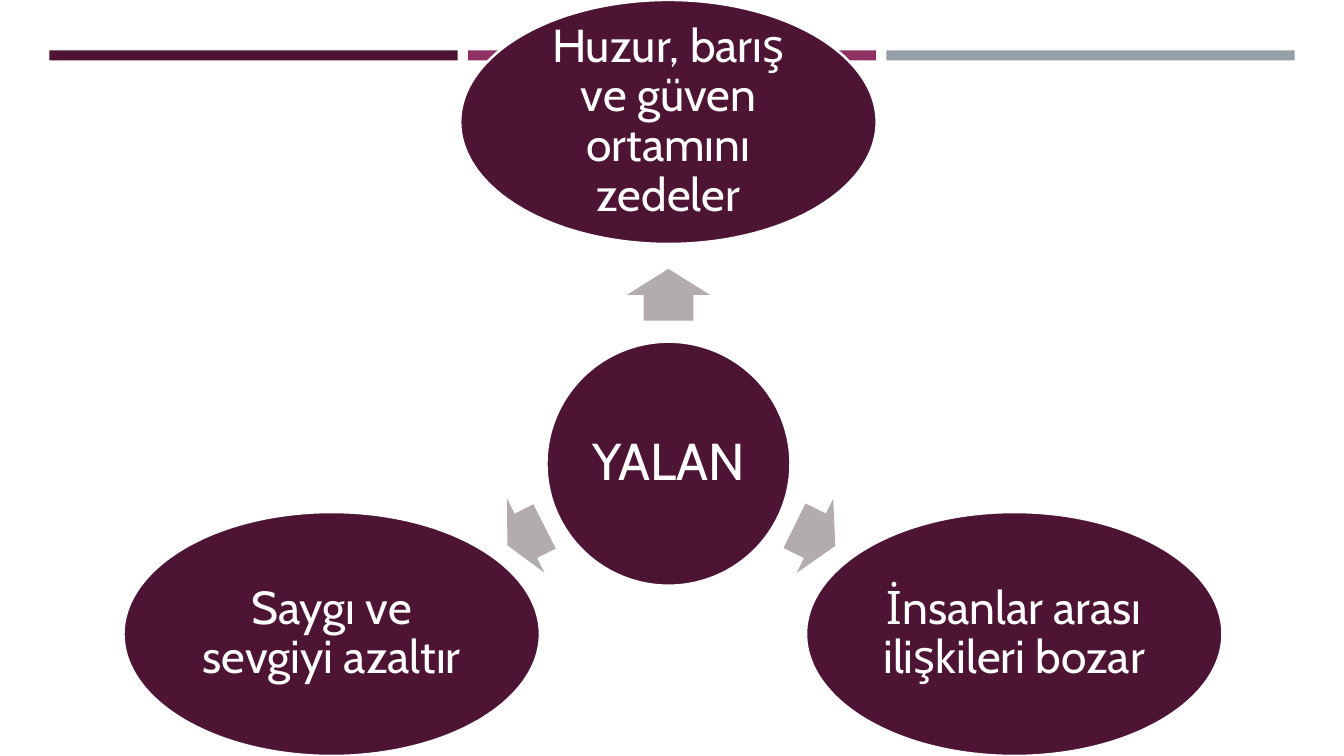
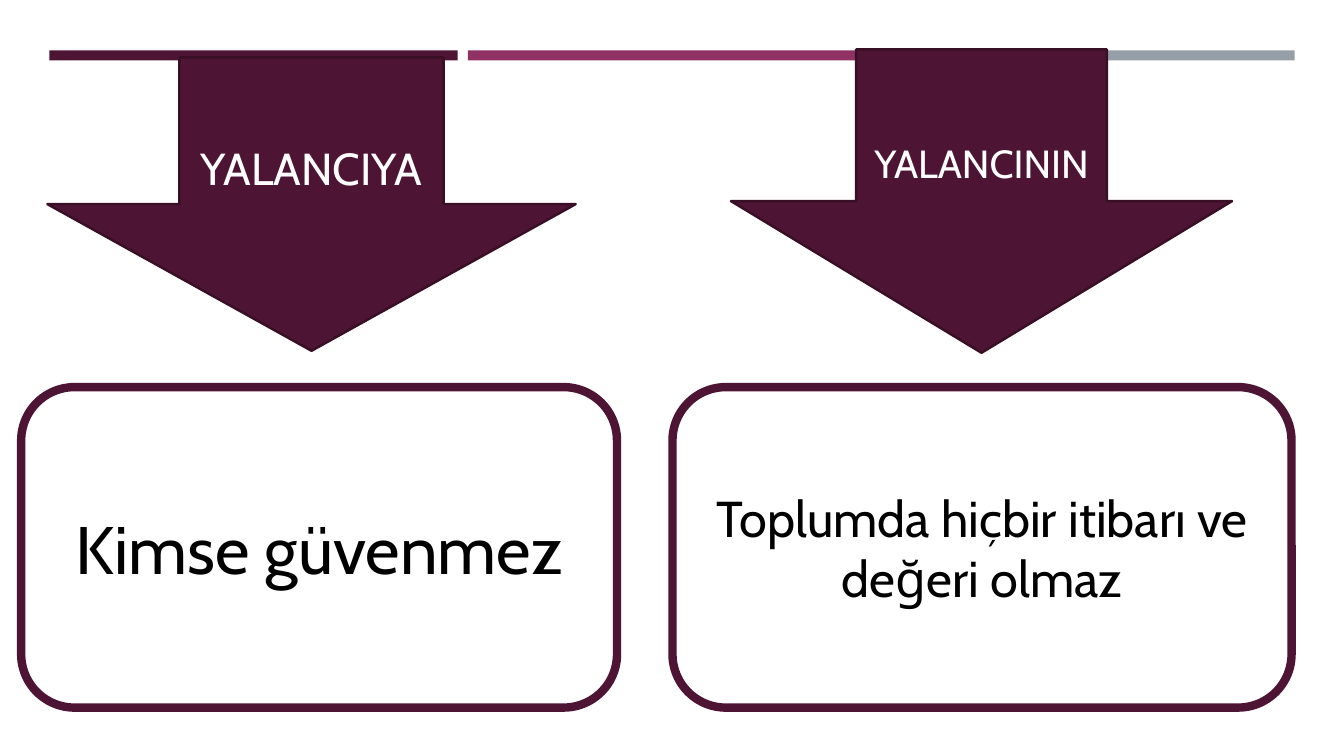
"""Build two slides on the consequences of lying."""
import math

import pptx
import pptx.dml.color
import pptx.enum.shapes
import pptx.enum.text
import pptx.util

SHAPE = pptx.enum.shapes.MSO_SHAPE
FONT = "Cabin"
COLORS = {
    "plum": "4D1434",
    "magenta": "903163",
    "slate": "969FA7",
    "edge": "390F26",
    "arrow": "B2ACAE",
    "white": "FFFFFF",
    "black": "000000",
}

WIDTH, HEIGHT = 13.33, 7.5
BANDS = ["plum", "magenta", "slate"]
BAND_LEFT, BAND_TOP, BAND_WIDTH, BAND_HEIGHT, BAND_GAP = 0.49, 0.5, 4.05, 0.1, 0.1

HUB = ("YALAN", 6.63, 4.6)
EFFECTS = [
    ("Huzur, barış ve güven ortamını zedeler", 6.63, 1.21),
    ("İnsanlar arası ilişkileri bozar", 10.06, 6.29),
    ("Saygı ve sevgiyi azaltır", 3.29, 6.29),
]
HUB_SIZE = 2.42
EFFECT_WIDTH = 4.13
ARROW_THICKNESS = 0.82
ARROW_SHARE, ARROW_MIDDLE = 0.53, 0.48

BOX_TOP, BOX_HEIGHT = 3.84, 3.18
OUTCOMES = [
    {"who": ("YALANCIYA", 32), "arrow": (0.47, 0.57, 5.24, 2.91),
     "result": ("Kimse güvenmez", 48), "box": (0.21, 5.91)},
    {"who": ("YALANCININ", 28), "arrow": (7.25, 0.49, 4.97, 3.01),
     "result": ("Toplumda hiçbir itibarı ve değeri olmaz", 36), "box": (6.67, 6.14)},
]


def rgb(name):
    return pptx.dml.color.RGBColor.from_string(COLORS[name])


def add_figure(slide, kind, box, fill, line=None, line_width=1.75):
    figure = slide.shapes.add_shape(kind, *(pptx.util.Inches(v) for v in box))
    figure.shadow.inherit = False
    figure.fill.solid()
    figure.fill.fore_color.rgb = rgb(fill)
    if line:
        figure.line.color.rgb = rgb(line)
        figure.line.width = pptx.util.Pt(line_width)
    else:
        figure.line.fill.background()
    return figure


def write(figure, words, size, color="white", spacing=1.0, inset=None):
    frame = figure.text_frame
    frame.text = words
    frame.word_wrap = True
    frame.vertical_anchor = pptx.enum.text.MSO_ANCHOR.MIDDLE
    if inset is not None:
        frame.margin_left = frame.margin_right = pptx.util.Inches(inset)
        frame.margin_top = frame.margin_bottom = pptx.util.Inches(inset)
    paragraph = frame.paragraphs[0]
    paragraph.alignment = pptx.enum.text.PP_ALIGN.CENTER
    paragraph.line_spacing = spacing
    font = paragraph.runs[0].font
    font.name, font.size, font.color.rgb = FONT, pptx.util.Pt(size), rgb(color)


def add_banded_slide(deck):
    slide = deck.slides.add_slide(deck.slide_layouts[6])
    for column, color in enumerate(BANDS):
        left = BAND_LEFT + column * (BAND_WIDTH + BAND_GAP)
        add_figure(slide, SHAPE.RECTANGLE, (left, BAND_TOP, BAND_WIDTH, BAND_HEIGHT), color)
    return slide


def centred(x, y, width, height):
    return x - width / 2, y - height / 2, width, height


def add_oval(slide, words, x, y, width, size):
    oval = add_figure(slide, SHAPE.OVAL, centred(x, y, width, HUB_SIZE), "plum", "white")
    write(oval, words, size, spacing=0.9, inset=0.05)


def add_spoke(slide, x, y):
    hub_x, hub_y = HUB[1:]
    angle = math.atan2(y - hub_y, x - hub_x)
    radius = HUB_SIZE / 2
    reach = 1 / math.hypot(math.cos(angle) / (EFFECT_WIDTH / 2), math.sin(angle) / radius)
    gap = math.hypot(x - hub_x, y - hub_y) - radius - reach
    middle = radius + ARROW_MIDDLE * gap
    box = centred(hub_x + middle * math.cos(angle), hub_y + middle * math.sin(angle),
                  ARROW_SHARE * gap, ARROW_THICKNESS)
    spoke = add_figure(slide, SHAPE.RIGHT_ARROW, box, "arrow")
    spoke.adjustments[0], spoke.adjustments[1] = 0.6, 0.5
    spoke.rotation = math.degrees(angle) % 360


def build_effects(deck):
    slide = add_banded_slide(deck)
    add_oval(slide, *HUB, HUB_SIZE, 37)
    for words, x, y in EFFECTS:
        add_spoke(slide, x, y)
        add_oval(slide, words, x, y, EFFECT_WIDTH, 33)


def build_outcomes(deck):
    slide = add_banded_slide(deck)
    for outcome in OUTCOMES:
        arrow = add_figure(slide, SHAPE.DOWN_ARROW, outcome["arrow"], "plum", "edge")
        write(arrow, *outcome["who"])
        left, width = outcome["box"]
        result = add_figure(slide, SHAPE.ROUNDED_RECTANGLE,
                            (left, BOX_TOP, width, BOX_HEIGHT), "white", "plum", 6)
        write(result, *outcome["result"], color="black")


def main():
    deck = pptx.Presentation()
    deck.slide_width = pptx.util.Inches(WIDTH)
    deck.slide_height = pptx.util.Inches(HEIGHT)
    build_effects(deck)
    build_outcomes(deck)
    deck.save("out.pptx")


if __name__ == "__main__":
    main()
